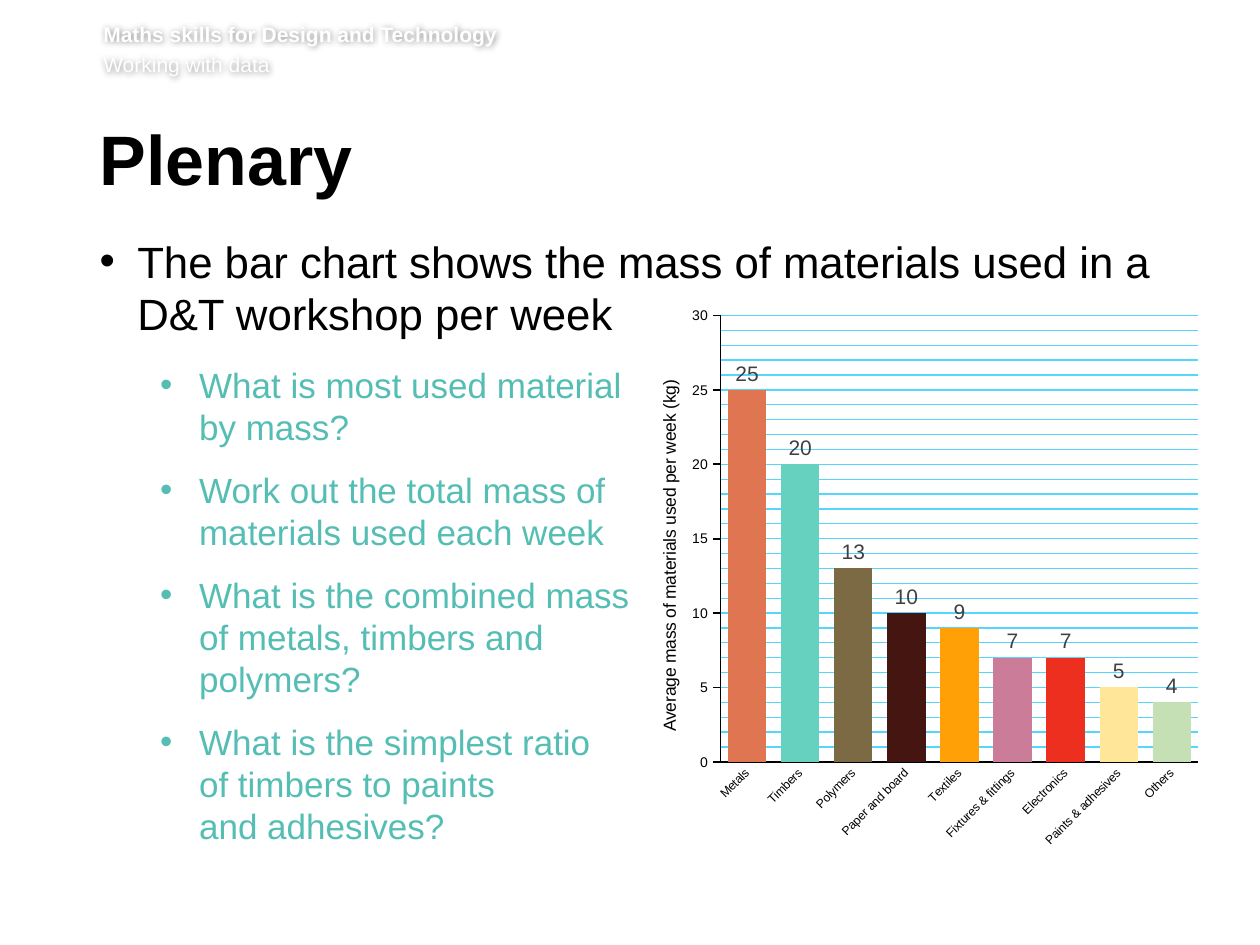
from dataclasses import dataclass

from lxml.etree import SubElement as Sub
from pptx import Presentation
from pptx.chart.data import CategoryChartData
from pptx.dml.color import RGBColor as RGB
from pptx.enum.chart import XL_CHART_TYPE as ChartType
from pptx.enum.chart import XL_LABEL_POSITION as LabelPos
from pptx.enum.chart import XL_TICK_MARK as Tick
from pptx.oxml.ns import qn
from pptx.util import Inches, Pt


@dataclass(frozen=True)
class Theme:
    font: str = "Arial"
    black: str = "000000"
    white: str = "FFFFFF"
    teal: str = "55BEB4"
    grid: str = "55D6FF"
    label: str = "404040"
    header_size: float = 12
    title_size: float = 40
    body_size: float = 25
    question_size: float = 20
    axis_title_size: float = 10
    value_size: float = 8
    category_size: float = 7


def assign(target, values):
    for name, value in values.items():
        setattr(target, name, value)


def place_layout(parent, index, values, inner=False):
    for old in parent.findall(qn("c:layout")):
        parent.remove(old)
    layout = parent.makeelement(qn("c:layout"), {})
    parent.insert(index, layout)
    manual = Sub(layout, qn("c:manualLayout"))
    if inner:
        Sub(manual, qn("c:layoutTarget"), val="inner")
    for axis in "xy":
        Sub(manual, qn(f"c:{axis}Mode"), val="edge")
    for name, value in zip("xywh", values):
        Sub(manual, qn(f"c:{name}"), val=str(value))


class SlideBuilder:
    def __init__(self, slide, theme):
        self.slide = slide
        self.theme = theme

    def style_font(self, font, size, color, bold=False):
        assign(font, {"name": self.theme.font, "size": Pt(size), "bold": bold})
        font.color.rgb = RGB.from_string(color)

    def style_line(self, line, color, width):
        line.color.rgb = RGB.from_string(color)
        line.width = Pt(width)

    def text(self, at, paragraphs, margins):
        box = self.slide.shapes.add_textbox(*map(Inches, at))
        frame = box.text_frame
        frame.word_wrap = True
        sides = ("margin_left", "margin_top", "margin_right", "margin_bottom")
        assign(frame, dict(zip(sides, map(Inches, margins))))
        for number, (words, font, spacing, indent) in enumerate(paragraphs):
            paragraph = frame.add_paragraph() if number else frame.paragraphs[0]
            paragraph.text = words
            if indent:
                self.bullet(paragraph, *indent)
            assign(paragraph, spacing)
            for run in paragraph.runs:
                self.style_font(run.font, *font)
        return box

    def bullet(self, paragraph, left, hanging):
        props = paragraph._p.get_or_add_pPr()
        props.set("marL", str(Inches(left)))
        props.set("indent", str(-Inches(hanging)))
        Sub(props, qn("a:buFont"), typeface=self.theme.font)
        Sub(props, qn("a:buChar"), char="•")

    def soft_shadow(self, box):
        effects = Sub(box._element.spPr, qn("a:effectLst"))
        shadow = Sub(effects, qn("a:outerShdw"), blurRad=str(Pt(4)),
                     dist="0", dir="0", algn="ctr", rotWithShape="0")
        color = Sub(shadow, qn("a:srgbClr"), val=self.theme.black)
        Sub(color, qn("a:alpha"), val="43000")

    def column_chart(self, at, masses, axis_title):
        theme = self.theme
        data = CategoryChartData()
        data.categories = [material for material, _, _ in masses]
        data.add_series("Series 1", [mass for _, mass, _ in masses])
        chart = self.slide.shapes.add_chart(
            ChartType.COLUMN_CLUSTERED, *map(Inches, at), data).chart
        assign(chart, {"has_legend": False, "has_title": False})
        self.style_font(chart.font, theme.axis_title_size, theme.black)
        place_layout(chart._chartSpace.chart.plotArea, 0,
                     (0.144, 0.037, 0.828, 0.749), inner=True)

        plot = chart.plots[0]
        assign(plot, {"gap_width": 39, "overlap": -32,
                      "vary_by_categories": False, "has_data_labels": True})
        assign(plot.data_labels, {"show_value": True,
                                  "position": LabelPos.OUTSIDE_END})
        self.style_font(plot.data_labels.font, theme.header_size, theme.label)
        for number, (_, _, color) in enumerate(masses):
            fill = plot.series[0].points[number].format.fill
            fill.solid()
            fill.fore_color.rgb = RGB.from_string(color)

        materials, mass_axis = chart.category_axis, chart.value_axis
        for axis, size, tick in ((materials, theme.category_size, Tick.NONE),
                                 (mass_axis, theme.value_size, Tick.OUTSIDE)):
            self.style_font(axis.tick_labels.font, size, theme.black)
            self.style_line(axis.format.line, theme.black, 1)
            assign(axis, {"major_tick_mark": tick,
                          "minor_tick_mark": Tick.NONE})
        slant = materials._element.find(qn("c:txPr")).find(qn("a:bodyPr"))
        slant.set("rot", "-2700000")
        slant.set("vert", "horz")

        assign(mass_axis, {"minimum_scale": 0, "maximum_scale": 30,
                           "major_unit": 5, "minor_unit": 1,
                           "has_major_gridlines": True,
                           "has_minor_gridlines": True})
        self.style_line(mass_axis.major_gridlines.format.line, theme.grid, 0.75)
        minor = Sub(mass_axis._element.find(qn("c:minorGridlines")), qn("c:spPr"))
        line = Sub(minor, qn("a:ln"), w=str(Pt(0.75)))
        Sub(Sub(line, qn("a:solidFill")), qn("a:srgbClr"), val=theme.grid)

        title = mass_axis.axis_title
        frame = title.text_frame
        frame.text = axis_title
        self.style_font(frame.paragraphs[0].runs[0].font,
                        theme.axis_title_size, theme.black)
        upright = frame._txBody.find(qn("a:bodyPr"))
        upright.set("rot", "-5400000")
        upright.set("vert", "horz")
        place_layout(title._element, 1, (0.03, 0.14))


def main():
    theme = Theme()
    deck = Presentation()
    assign(deck, {"slide_width": Inches(10), "slide_height": Inches(7.5)})
    builder = SlideBuilder(deck.slides.add_slide(deck.slide_layouts[6]), theme)

    header = builder.text((0.82, 0.17, 8.82, 0.49), [
        ("Maths skills for Design and Technology",
         (theme.header_size, theme.white, True), {}, None),
        ("Working with data", (theme.header_size, theme.white),
         {"space_before": Pt(2.9)}, None),
    ], (0, 0, 0, 0.05))
    builder.soft_shadow(header)

    builder.text((0.79, 0.99, 8.55, 0.73), [
        ("Plenary", (theme.title_size, theme.black, True),
         {"line_spacing": Pt(39), "space_after": Pt(15)}, None),
    ], (0, 0.05, 0.1, 0.05))

    questions = [
        "What is most used material \vby mass?",
        "Work out the total mass of \vmaterials used each week",
        "What is the combined mass \vof metals, timbers and \vpolymers?",
        "What is the simplest ratio \vof timbers to paints \vand adhesives?",
    ]
    task = ("The bar chart shows the mass of materials used in a "
            "D&T workshop per week")
    builder.text((0.79, 1.86, 8.53, 3.03), [
        (task, (theme.body_size, theme.black),
         {"space_after": Pt(14)}, (0.3, 0.3)),
        *((question, (theme.question_size, theme.teal),
           {"space_after": Pt(12), "level": 1}, (0.79, 0.31))
          for question in questions),
    ], (0, 0, 0.1, 0.05))

    builder.column_chart((5.06, 2.33, 4.58, 4.73), [
        ("Metals", 25, "DF7651"),
        ("Timbers", 20, "65D1BE"),
        ("Polymers", 13, "7B6A44"),
        ("Paper and board", 10, "451512"),
        ("Textiles", 9, "FFA006"),
        ("Fixtures & fittings", 7, "CA7C99"),
        ("Electronics", 7, "EC2F1E"),
        ("Paints & adhesives", 5, "FFE699"),
        ("Others", 4, "C5E0B4"),
    ], "Average mass of materials used per week (kg)")
    deck.save("out.pptx")


if __name__ == "__main__":
    main()
